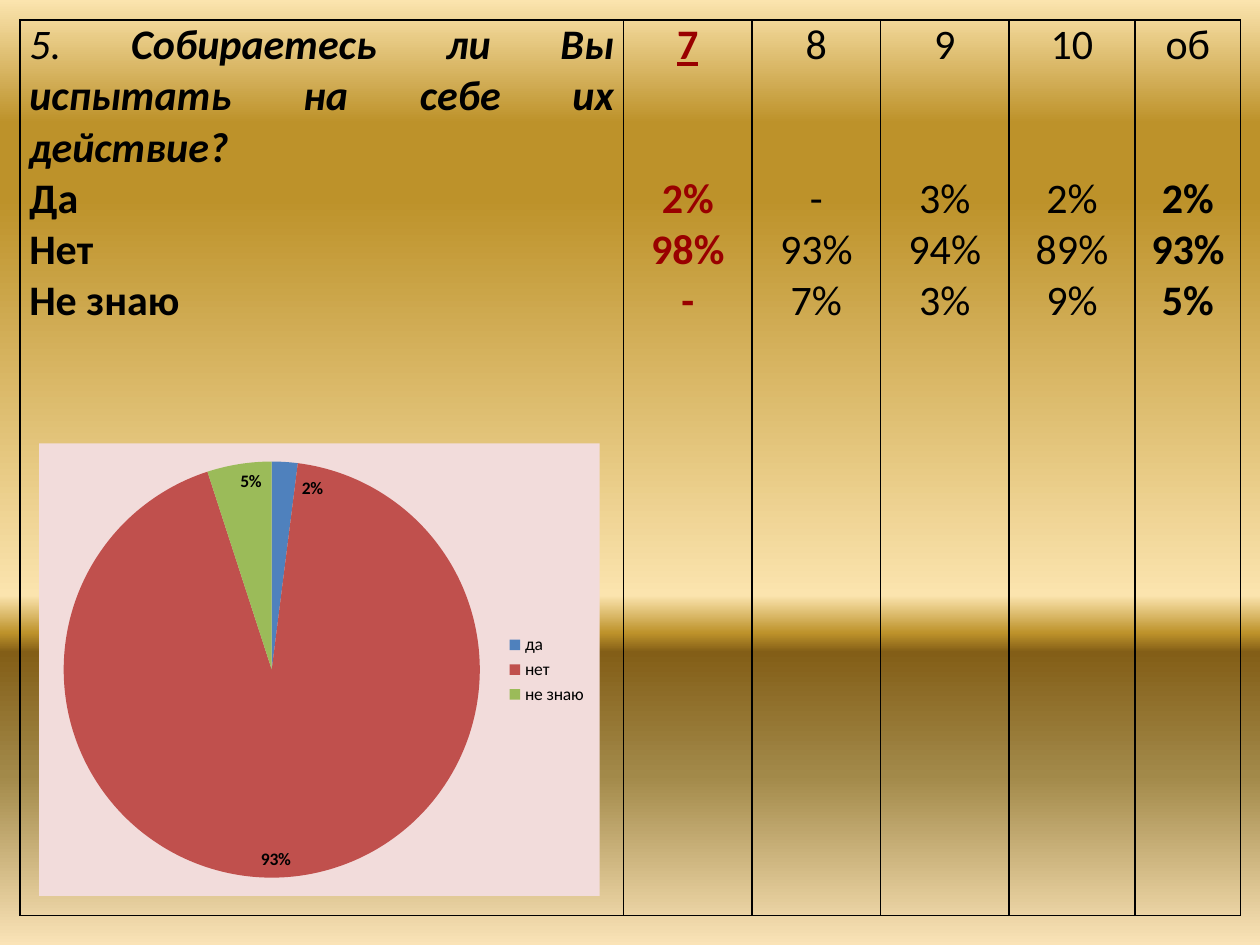
from lxml import etree
from pptx import Presentation
from pptx.chart.data import CategoryChartData
from pptx.dml.color import RGBColor
from pptx.enum.chart import XL_CHART_TYPE, XL_LABEL_POSITION, XL_LEGEND_POSITION
from pptx.enum.text import PP_ALIGN
from pptx.oxml import parse_xml
from pptx.oxml.ns import nsdecls, qn
from pptx.util import Cm, Pt

PIE = XL_CHART_TYPE.PIE
RIGHT = XL_LEGEND_POSITION.RIGHT
IN_END = XL_LABEL_POSITION.INSIDE_END
CENTER, JUSTIFY = PP_ALIGN.CENTER, PP_ALIGN.JUSTIFY

BLACK, RED = "000000", "990000"
GOLD = [(0, "FBE4AE"), (13, "BD922A"), (21, "BD922A"), (63, "FBE4AE"),
        (67, "BD922A"), (69, "835E17"), (82, "A28949"), (100, "FAE3B7")]
QUESTION = "Собираетесь ли Вы испытать на себе их действие?"
ANSWERS = ["Да", "Нет", "Не знаю"]
# heading, answers, colour, bold heading, bold answers
GRADES = [
    ("7", ["2%", "98%", "-"], RED, True, True),
    ("8", ["-", "93%", "7%"], BLACK, False, False),
    ("9", ["3%", "94%", "3%"], BLACK, False, False),
    ("10", ["2%", "89%", "9%"], BLACK, False, False),
    ("об", ["2%", "93%", "5%"], BLACK, False, True),
]
WIDTHS = [12.17, 2.59, 2.59, 2.59, 2.54, 2.13]
SLICES = [("да", 0.02, "4F81BD"), ("нет", 0.93, "C0504D"),
          ("не знаю", 0.05, "9BBB59")]


def rgb(code):
    return RGBColor.from_string(code)


def layout(**parts):
    """Make a manual chart layout from its named parts."""
    inner = "".join(f'<c:{key} val="{val}"/>' for key, val in parts.items())
    return parse_xml(f'<c:layout {nsdecls("c")}><c:manualLayout>{inner}'
                     '</c:manualLayout></c:layout>')


class Deck:
    def __init__(self, font, size):
        self.font, self.size = font, size
        self.prs = Presentation()
        self.prs.slide_width, self.prs.slide_height = Cm(25.4), Cm(19.05)
        self.slide = self.prs.slides.add_slide(self.prs.slide_layouts[6])

    def backdrop(self, stops):
        """Fill the background from top to bottom."""
        self.slide.background.fill.gradient()
        grad = next(self.slide.element.iter(qn("a:gradFill")))
        items = grad.find(qn("a:gsLst"))
        for old in list(items):
            items.remove(old)
        for place, code in stops:
            stop = etree.SubElement(items, qn("a:gs"), pos=str(place * 1000))
            etree.SubElement(stop, qn("a:srgbClr"), val=code)
        line = grad.find(qn("a:lin"))
        line.set("ang", "5400000")
        line.set("scaled", "0")

    def table(self, left, top, height, widths):
        frame = self.slide.shapes.add_table(
            1, len(widths), Cm(left), Cm(top), Cm(sum(widths)), Cm(height))
        table = frame.table
        table.first_row = table.horz_banding = False
        for col, width in zip(table.columns, widths):
            col.width = Cm(width)
        for cell in table.iter_cells():
            cell.margin_left = cell.margin_right = Cm(0.19)
            cell.margin_top = cell.margin_bottom = 0
            self.border(cell)
            cell.fill.background()
        return table

    def border(self, cell):
        props = cell._tc.get_or_add_tcPr()
        for side in ("lnL", "lnR", "lnT", "lnB"):
            line = etree.SubElement(props, qn(f"a:{side}"), w=str(Pt(1)))
            fill = etree.SubElement(line, qn("a:solidFill"))
            etree.SubElement(fill, qn("a:srgbClr"), val=BLACK)

    def lines(self, cell, texts, align):
        """Write one paragraph per text and return the paragraphs."""
        cell.text = "\n".join(texts)
        paras = cell.text_frame.paragraphs
        for para in paras:
            para.alignment = align
            self.style(para.font, self.size)
        return paras

    def style(self, font, size, color=BLACK, bold=False):
        font.name, font.size, font.bold = self.font, Pt(size), bold
        font.color.rgb = rgb(color)

    def pie(self, left, top, width, height, slices, back):
        data = CategoryChartData(number_format="0%")
        data.categories = [name for name, _, _ in slices]
        data.add_series("Series 1", [val for _, val, _ in slices])
        chart = self.slide.shapes.add_chart(
            PIE, Cm(left), Cm(top), Cm(width), Cm(height), data).chart
        self.style(chart.font, 10)
        chart.has_title = False
        chart.has_legend = True
        chart.legend.position = RIGHT
        chart.legend.include_in_layout = False

        plot = chart.plots[0]
        plot.vary_by_categories = True
        series = plot.series[0]
        for num, (_, _, code) in enumerate(slices):
            fill = series.points[num].format.fill
            fill.solid()
            fill.fore_color.rgb = rgb(code)
        labels = series.data_labels
        labels.show_value = True
        labels.show_percentage = False
        labels.number_format, labels.number_format_is_linked = "0%", False
        labels.position = IN_END
        self.style(labels.font, 10, bold=True)

        # The first slice is too thin to hold its label
        first = series.points[0].data_label
        self.style(first.font, 10, bold=True)
        first.position = IN_END
        tag = next(chart.element.iter(qn("c:dLbl")))
        tag.find(qn("c:idx")).addnext(layout(x=0.05, y=0.02))

        area = next(chart.element.iter(qn("c:plotArea")))
        old = area.find(qn("c:layout"))
        if old is not None:
            area.remove(old)
        area.insert(0, layout(layoutTarget="inner", xMode="edge", yMode="edge",
                              x=0.04, y=0.04, w=0.75, h=0.92))
        area.getparent().addnext(parse_xml(
            f'<c:spPr {nsdecls("c", "a")}><a:solidFill><a:srgbClr val="{back}"/>'
            '</a:solidFill><a:ln><a:noFill/></a:ln></c:spPr>'))


def main():
    deck = Deck("Calibri", 24)
    deck.backdrop(GOLD)
    table = deck.table(0.4, 0.4, 18.06, WIDTHS)

    paras = deck.lines(table.cell(0, 0), ["5. "] + ANSWERS, JUSTIFY)
    paras[0].font.italic = True
    paras[0].add_run().text = QUESTION
    for run, bold in zip(paras[0].runs, (False, True)):
        deck.style(run.font, 24, bold=bold)
        run.font.italic = True
    for para in paras[1:]:
        para.font.bold = True

    for col, (head, shares, color, top, rest) in enumerate(GRADES, 1):
        paras = deck.lines(table.cell(0, col), [head] + shares, CENTER)
        for para in paras:
            deck.style(para.font, 24, color, rest)
        paras[0].font.bold = top
        paras[0].font.underline = color == RED
        paras[1].space_before = Pt(58.6)  # the question takes two more lines

    deck.pie(0.79, 8.94, 11.3, 9.12, SLICES, "F2DCDB")
    deck.prs.save("out.pptx")


if __name__ == "__main__":
    main()
